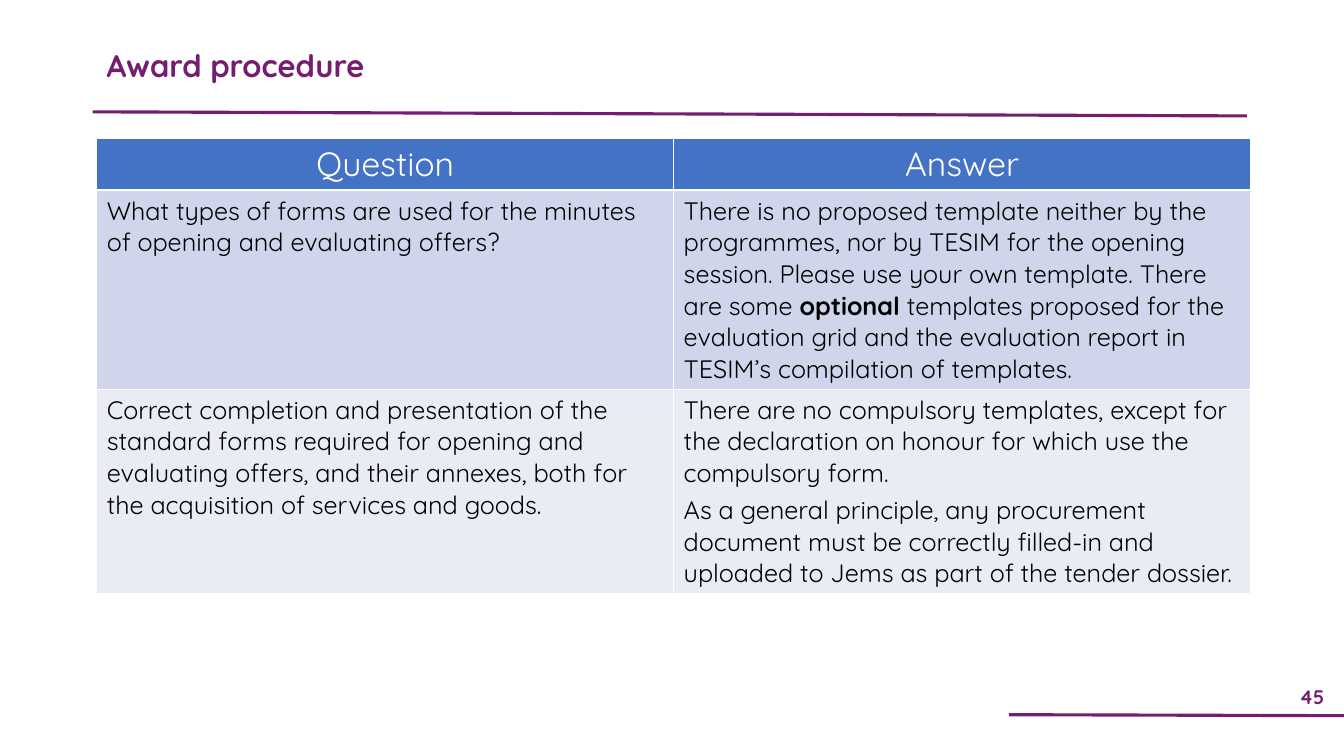
"""Build the award procedure question and answer slide."""
import pptx
import pptx.dml.color
import pptx.enum.shapes
import pptx.enum.text
import pptx.oxml.ns
import pptx.util
from lxml import etree

Pt = pptx.util.Pt
ALIGN = pptx.enum.text.PP_ALIGN
ANCHOR = pptx.enum.text.MSO_ANCHOR

FONT = "Quicksand"
COLOURS = {"purple": "751D70", "header": "4472C4", "band_dark": "CFD5EA",
           "band_light": "E9EBF5", "white": "FFFFFF", "black": "000000"}

TITLE = "Award procedure"
PAGE_NUMBER = "45"
ROWS = [
    ["Question", "Answer"],
    ["What types of forms are used for the minutes of opening and evaluating offers?",
     [["There is no proposed template neither by the programmes, nor by TESIM for the "
       "opening session. Please use your own template. There are some ",
       ("optional",),
       " templates proposed for the evaluation grid and the evaluation report in "
       "TESIM’s compilation of templates."]]],
    ["Correct completion and presentation of the standard forms required for opening and "
     "evaluating offers, and their annexes, both for the acquisition of services and goods.",
     [["There are no compulsory templates, except for the declaration on honour for which "
       "use the compulsory form."],
      ["As a general principle, any procurement document must be correctly filled-in and "
       "uploaded to Jems as part of the tender dossier."]]],
]
ROW_HEIGHTS = [37.2, 142.2, 146.2]
ROW_FILLS = ["header", "band_dark", "band_light"]
TABLE_LEFT, TABLE_TOP, COLUMN_WIDTH = 69.1, 98.6, 412.1
RULES = [(66.2, 79.9, 890.6, 82.8), (720.7, 510.5, 961.2, 511.2)]

HEADER_STYLE = {"size": Pt(24), "bold": False, "colour": "white"}
BODY_STYLE = {"size": Pt(18), "bold": False, "colour": "black"}
TITLE_STYLE = {"size": Pt(22.2), "bold": True, "colour": "purple"}
NUMBER_STYLE = {"size": Pt(14), "bold": True, "colour": "purple"}


def rgb(name):
    """Return the named colour."""
    return pptx.dml.color.RGBColor.from_string(COLOURS[name])


def write(frame, content, style, **paragraph_format):
    """Fill a text frame; runs given as tuples are bold."""
    paragraphs = [[content]] if isinstance(content, str) else content
    for index, pieces in enumerate(paragraphs):
        paragraph = frame.add_paragraph() if index else frame.paragraphs[0]
        for name, value in paragraph_format.items():
            setattr(paragraph, name, value)
        for piece in pieces:
            run = paragraph.add_run()
            emphasised = isinstance(piece, tuple)
            run.text = piece[0] if emphasised else piece
            values = {"name": FONT, "size": style["size"],
                      "bold": emphasised or style["bold"]}
            for name, value in values.items():
                setattr(run.font, name, value)
            run.font.color.rgb = rgb(style["colour"])


def add_text(slide, box, content, style, anchor, **paragraph_format):
    """Add a wrapping text box."""
    frame = slide.shapes.add_textbox(*map(Pt, box)).text_frame
    frame.word_wrap = True
    frame.vertical_anchor = anchor
    write(frame, content, style, **paragraph_format)


def add_rule(slide, ends):
    """Add a purple line without a shadow."""
    line = slide.shapes.add_connector(
        pptx.enum.shapes.MSO_CONNECTOR.STRAIGHT, *map(Pt, ends))
    line.line.color.rgb = rgb("purple")
    line.line.width = Pt(2.25)
    etree.SubElement(line._element.spPr, pptx.oxml.ns.qn("a:effectLst"))


def add_questions(slide):
    """Add the question and answer table."""
    columns = len(ROWS[0])
    table = slide.shapes.add_table(
        len(ROWS), columns, Pt(TABLE_LEFT), Pt(TABLE_TOP),
        Pt(COLUMN_WIDTH * columns), Pt(sum(ROW_HEIGHTS))).table
    for column in table.columns:
        column.width = Pt(COLUMN_WIDTH)
    for row_index, contents in enumerate(ROWS):
        table.rows[row_index].height = Pt(ROW_HEIGHTS[row_index])
        for column_index, content in enumerate(contents):
            cell = table.cell(row_index, column_index)
            cell.fill.solid()
            cell.fill.fore_color.rgb = rgb(ROW_FILLS[row_index])
            several = not isinstance(content, str) and len(content) > 1
            write(cell.text_frame, content,
                  BODY_STYLE if row_index else HEADER_STYLE,
                  alignment=ALIGN.LEFT if row_index else ALIGN.CENTER,
                  space_after=Pt(4 if several else 0))


def main():
    """Build and save the presentation."""
    presentation = pptx.Presentation()
    presentation.slide_width, presentation.slide_height = Pt(960), Pt(540)
    slide = presentation.slides.add_slide(presentation.slide_layouts[6])
    for ends in RULES:
        add_rule(slide, ends)
    add_text(slide, (914.4, 484.6, 45.4, 25.9), PAGE_NUMBER, NUMBER_STYLE,
             ANCHOR.MIDDLE, alignment=ALIGN.CENTER)
    add_text(slide, (69.1, 34.6, 700.6, 30.2), TITLE, TITLE_STYLE,
             ANCHOR.TOP, alignment=ALIGN.JUSTIFY, line_spacing=0.8)
    add_questions(slide)
    presentation.save("out.pptx")


if __name__ == "__main__":
    main()
